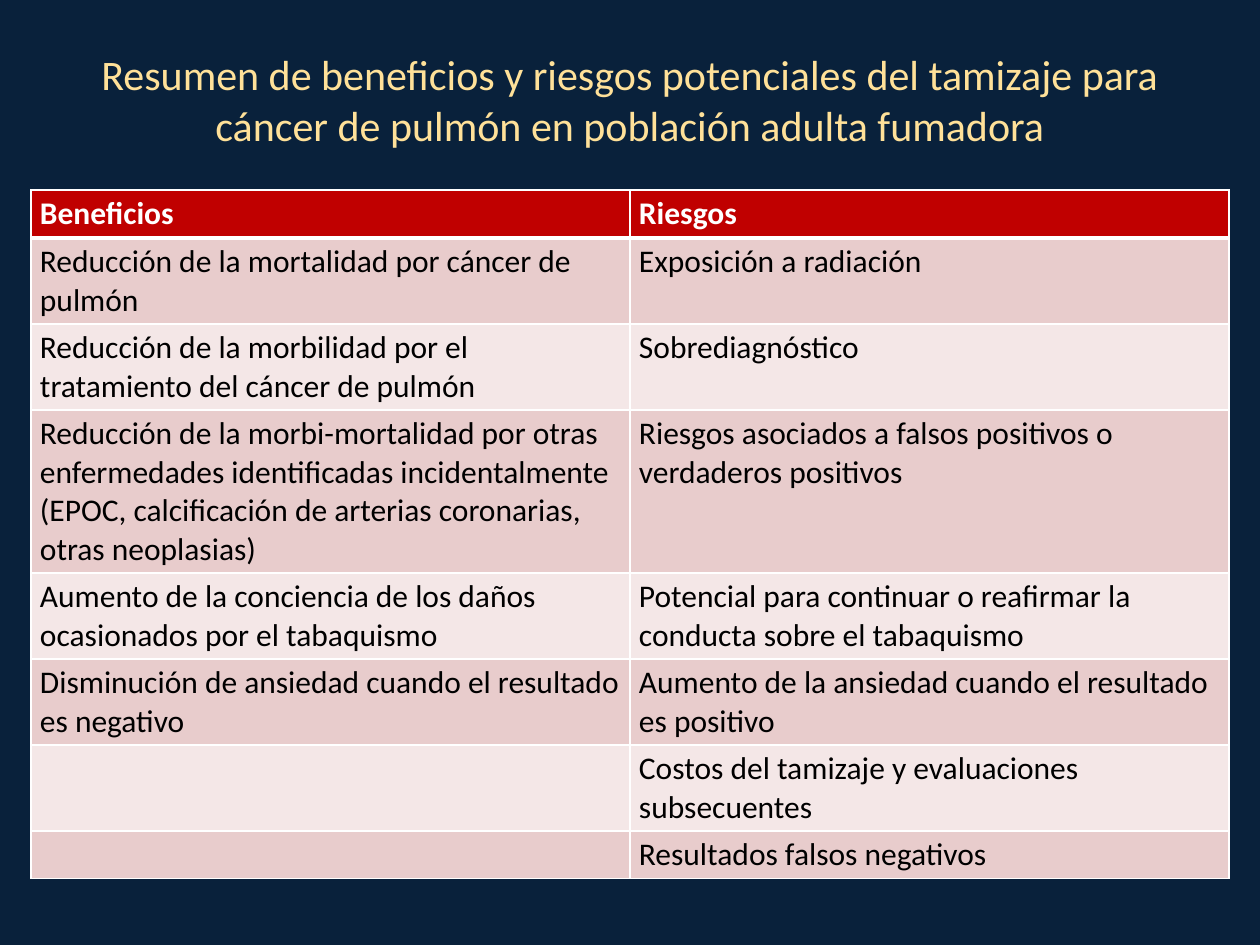
from dataclasses import dataclass

from lxml.etree import SubElement
from pptx import Presentation
from pptx.dml.color import RGBColor
from pptx.enum.text import MSO_ANCHOR, PP_ALIGN
from pptx.oxml.ns import qn
from pptx.slide import Slide
from pptx.table import _Cell
from pptx.text.text import TextFrame
from pptx.util import Pt

EMU_PER_PX = 914400 / 126
FONT = "Calibri"
COLORS = {
    "background": "09213B",
    "title": "FFE199",
    "white": "FFFFFF",
    "black": "000000",
    "header": "C00000",
    "odd": "E8CCCC",
    "even": "F4E7E7",
}
TITLE = (
    "Resumen de beneficios y riesgos potenciales del tamizaje para "
    "cáncer de pulmón en población adulta fumadora"
)


@dataclass(frozen=True)
class Row:
    benefit: str
    risk: str
    height: int = 86


ROWS = [
    Row("Beneficios", "Riesgos", 48),
    Row("Reducción de la mortalidad por cáncer de pulmón", "Exposición a radiación"),
    Row("Reducción de la morbilidad por el tratamiento del cáncer de pulmón", "Sobrediagnóstico"),
    Row(
        "Reducción de la morbi-mortalidad por otras enfermedades identificadas "
        "incidentalmente (EPOC, calcificación de arterias coronarias, otras neoplasias)",
        "Riesgos asociados a falsos positivos o verdaderos positivos",
        163,
    ),
    Row(
        "Aumento de la conciencia de los daños ocasionados por el tabaquismo",
        "Potencial para continuar o reafirmar la conducta sobre el tabaquismo",
    ),
    Row(
        "Disminución de ansiedad cuando el resultado es negativo",
        "Aumento de la ansiedad cuando el resultado es positivo",
    ),
    Row("", "Costos del tamizaje y evaluaciones subsecuentes"),
    Row("", "Resultados falsos negativos", 48),
]


def px(length: int) -> int:
    return round(length * EMU_PER_PX)


def color(name: str) -> RGBColor:
    return RGBColor.from_string(COLORS[name])


def write(frame: TextFrame, text: str, size: int, tint: str, bold: bool = False) -> None:
    frame.text = text
    for para in frame.paragraphs:
        for span in para.runs:
            span.font.name = FONT
            span.font.size = Pt(size)
            span.font.bold = bold
            span.font.color.rgb = color(tint)


def add_borders(cell: _Cell, top: int, bottom: int) -> None:
    properties = cell._tc.get_or_add_tcPr()
    widths = {"a:lnL": 1, "a:lnR": 1, "a:lnT": top, "a:lnB": bottom}
    for tag, width in widths.items():
        line = SubElement(properties, qn(tag), w=str(Pt(width)))
        fill = SubElement(line, qn("a:solidFill"))
        SubElement(fill, qn("a:srgbClr"), val=COLORS["white"])


def draw_title(page: Slide) -> None:
    frame = page.shapes.add_textbox(px(63), px(38), px(1134), px(122)).text_frame
    frame.word_wrap = True
    frame.vertical_anchor = MSO_ANCHOR.MIDDLE
    write(frame, TITLE, 24, "title")
    frame.paragraphs[0].alignment = PP_ALIGN.CENTER


def draw_cell(cell: _Cell, text: str, index: int) -> None:
    header = index == 0
    cell.margin_left = cell.margin_right = px(9)
    cell.margin_top = cell.margin_bottom = px(5)
    write(cell.text_frame, text, 18, "white" if header else "black", header)
    add_borders(cell, top=3 if index == 1 else 1, bottom=3 if header else 1)
    cell.fill.solid()
    cell.fill.fore_color.rgb = color("header" if header else "odd" if index % 2 else "even")


def draw_table(page: Slide, rows: list[Row]) -> None:
    height = sum(row.height for row in rows)
    table = page.shapes.add_table(len(rows), 2, px(31), px(190), px(1198), px(height)).table
    for index, row in enumerate(rows):
        table.rows[index].height = px(row.height)
        for column, text in enumerate((row.benefit, row.risk)):
            draw_cell(table.cell(index, column), text, index)


def main() -> None:
    """Build the slide on benefits and risks of lung cancer screening."""
    deck = Presentation()
    deck.slide_width, deck.slide_height = px(1260), px(945)
    page = deck.slides.add_slide(deck.slide_layouts[6])
    page.background.fill.solid()
    page.background.fill.fore_color.rgb = color("background")
    draw_title(page)
    draw_table(page, ROWS)
    deck.save("out.pptx")


if __name__ == "__main__":
    main()
